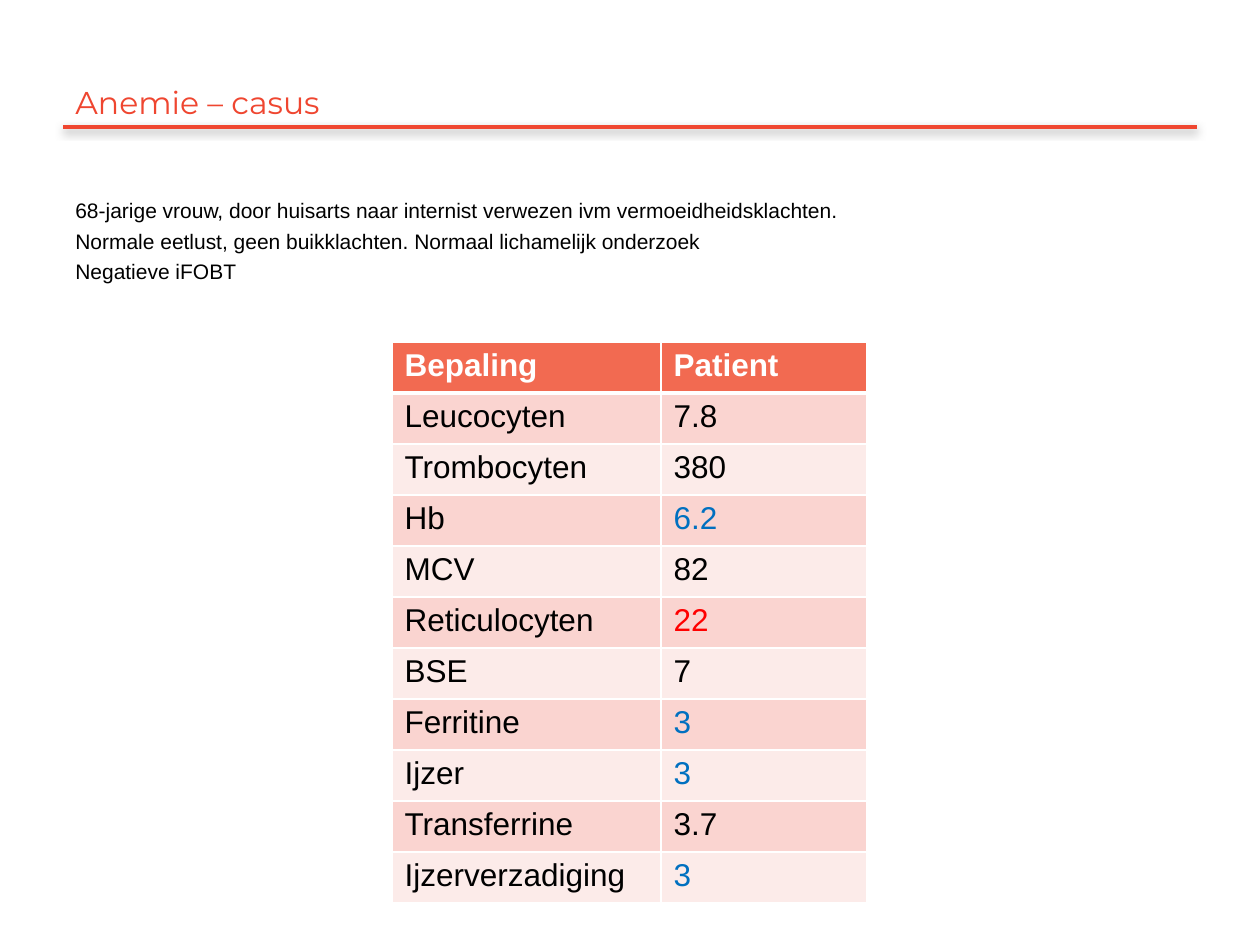
from lxml import etree
from pptx import Presentation
from pptx.dml.color import RGBColor
from pptx.enum.shapes import MSO_CONNECTOR as Connector
from pptx.enum.text import MSO_ANCHOR as Anchor
from pptx.oxml import parse_xml
from pptx.oxml.ns import nsdecls, qn
from pptx.util import Pt

SCALE = 914400 / 126  # EMU per px
RED, BLACK, WHITE, LOW, HIGH = "EF4630", "000000", "FFFFFF", "0070C0", "FF0000"
HEADER_FILL, BAND_FILLS = "F26A51", ("FAD4D0", "FCEBE9")


def px(length):
    return round(length * SCALE)


def write(paragraph, text, color, **formats):
    paragraph.text = text
    for name, value in formats.items():
        setattr(paragraph.font, name, value)
    paragraph.font.color.rgb = RGBColor.from_string(color)


presentation = Presentation()
presentation.slide_width, presentation.slide_height = px(1260), px(945)
slide = presentation.slides.add_slide(presentation.slide_layouts[6])

# Rule under the title, with a soft shadow
rule = slide.shapes.add_connector(Connector.STRAIGHT, px(63), px(127), px(1197), px(127))
rule.line.color.rgb = RGBColor.from_string(RED)
rule.line.width = Pt(2)
rule.element.spPr.append(parse_xml(
    f'<a:effectLst {nsdecls("a")}>'
    f'<a:outerShdw blurRad="{Pt(5)}" dist="{Pt(1.6)}" dir="5400000" rotWithShape="0">'
    '<a:srgbClr val="000000"><a:alpha val="38000"/></a:srgbClr>'
    '</a:outerShdw></a:effectLst>'))

# Title
title = slide.shapes.add_textbox(px(63), px(38), px(1134), px(89)).text_frame
title.word_wrap = True
title.vertical_anchor = Anchor.BOTTOM
write(title.paragraphs[0], "Anemie – casus", RED, name="Montserrat", size=Pt(18))

# Case description
case = slide.shapes.add_textbox(px(63), px(189), px(1134), px(653)).text_frame
case.word_wrap = True
case.margin_top = px(9)
case_lines = [
    "68-jarige vrouw, door huisarts naar internist verwezen ivm vermoeidheidsklachten.",
    "Normale eetlust, geen buikklachten. Normaal lichamelijk onderzoek",
    "Negatieve iFOBT",
]
for index, line in enumerate(case_lines):
    paragraph = case.add_paragraph() if index else case.paragraphs[0]
    write(paragraph, line, BLACK, name="Arial", size=Pt(12))
    if index:
        paragraph.space_before = Pt(3)

# Lab results: test, value, colour of the value
results = [
    ("Bepaling", "Patient", WHITE),
    ("Leucocyten", "7.8", BLACK),
    ("Trombocyten", "380", BLACK),
    ("Hb", "6.2", LOW),
    ("MCV", "82", BLACK),
    ("Reticulocyten", "22", HIGH),
    ("BSE", "7", BLACK),
    ("Ferritine", "3", LOW),
    ("Ijzer", "3", LOW),
    ("Transferrine", "3.7", BLACK),
    ("Ijzerverzadiging", "3", LOW),
]
row_height = 51
table = slide.shapes.add_table(len(results), 2, px(392), px(342), px(475),
                               px(row_height * len(results))).table
for column, width in zip(table.columns, (269, 206)):
    column.width = px(width)

for row, (test, value, value_color) in enumerate(results):
    header = row == 0
    fill = HEADER_FILL if header else BAND_FILLS[(row - 1) % 2]
    colors = (WHITE if header else BLACK, value_color)
    for column, (text, color) in enumerate(zip((test, value), colors)):
        cell = table.cell(row, column)
        write(cell.text_frame.paragraphs[0], text, color,
              name="Arial", size=Pt(18), bold=header)
        cell.fill.solid()
        cell.fill.fore_color.rgb = RGBColor.from_string(fill)
        # White borders, thicker between header and body
        widths = {"lnL": 1, "lnR": 1, "lnT": 3 if row == 1 else 1, "lnB": 3 if header else 1}
        properties = cell._tc.get_or_add_tcPr()
        for position, (side, width) in enumerate(widths.items()):
            border = etree.Element(qn(f"a:{side}"), w=str(Pt(width)))
            solid = etree.SubElement(border, qn("a:solidFill"))
            etree.SubElement(solid, qn("a:srgbClr"), val=WHITE)
            properties.insert(position, border)

presentation.save("out.pptx")
